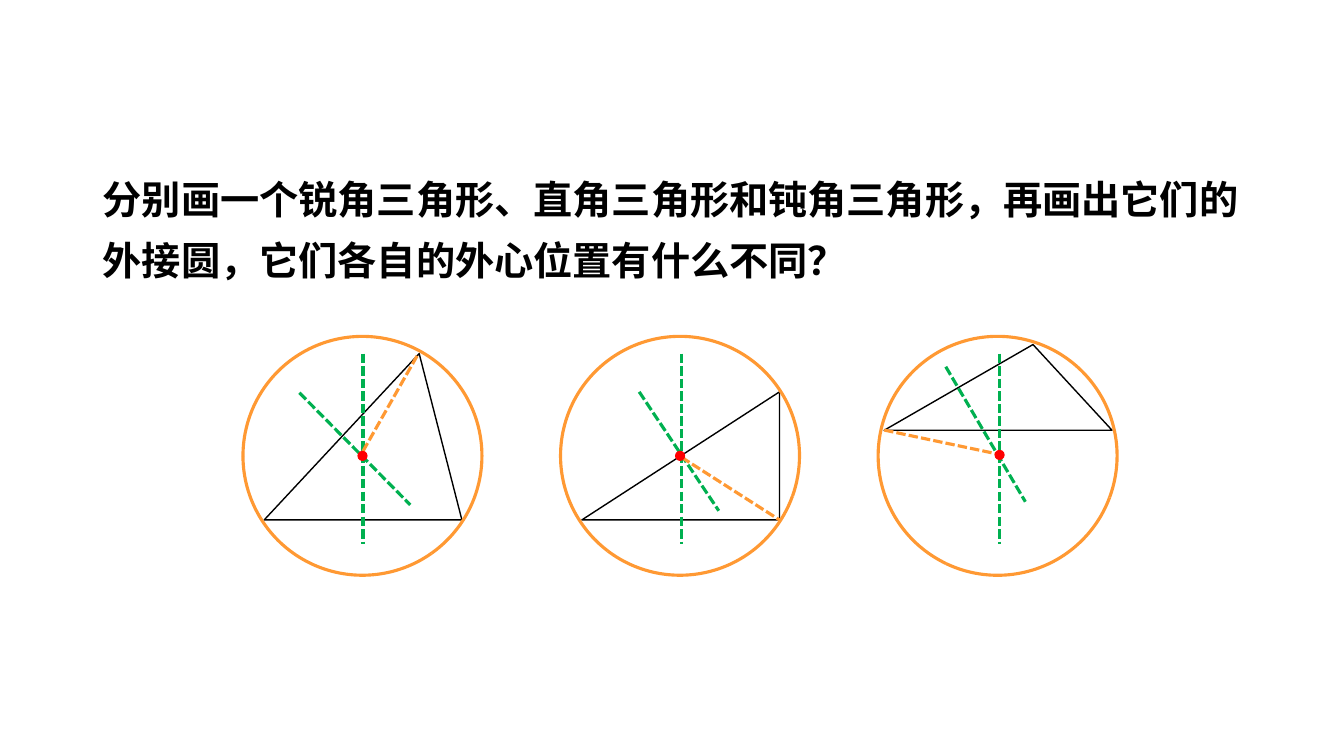
from lxml import etree
from pptx import Presentation
from pptx import util as u
from pptx.dml.color import RGBColor
from pptx.enum import dml, shapes, text
from pptx.oxml.ns import qn

COLORS = {"ink": "000000", "bisector": "00B050", "circle": "FF9933", "center": "FF0000"}
FONT = "Times New Roman"
QUESTION = ("分别画一个锐角三角形、直角三角形和钝角三角形，再画出它们的"
            "外接圆，它们各自的外心位置有什么不同？")
SLIDE_W, SLIDE_H = u.Inches(13.33), u.Inches(7.5)
DOT = 3.8
BISECTOR_TOP, BISECTOR_BOTTOM = 7.2, 86.9

# Percent of the circle's diameter, from its top left corner; angles in degrees.
TRIANGLES = [
    dict(triangle=(8.9, 7.2, 82.7, 69.6), apex=0.784, upright=50.2,
         slant=(23.6, 23.6, 70, 70.5), radius=(50.2, 48.1, 73.4, 7.2),
         center=(50, 50), split=(179.5, 54.7)),
    dict(triangle=(8.9, 23.2, 82.7, 53.6), apex=1, upright=50.6,
         slant=(32.9, 23.2, 66.2, 73), radius=(50.6, 50.6, 91.6, 76.8),
         center=(50, 50), split=(127.2, 19.7)),
    dict(triangle=(2.5, 3.4, 95.4, 35.9), apex=0.653, upright=50.6,
         slant=(28.3, 12.7, 61.6, 69.2), radius=(2.5, 39.2, 52.7, 49.8),
         center=(50.8, 49.6), split=(115.5, 20.4)),
]


def rgb(name):
    return RGBColor.from_string(COLORS[name])


def add_text(slide, content, box, size=28, color="ink", bold=True, spacing=1.3):
    frame = slide.shapes.add_textbox(*box).text_frame
    frame.word_wrap = True
    frame.auto_size = text.MSO_AUTO_SIZE.SHAPE_TO_FIT_TEXT
    frame.margin_left = frame.margin_right = u.Inches(0.13)
    frame.margin_top = frame.margin_bottom = u.Inches(0.07)
    paragraph = frame.paragraphs[0]
    paragraph.line_spacing = spacing
    run = paragraph.add_run()
    run.text = content
    run.font.name, run.font.size, run.font.bold = FONT, u.Pt(size), bold
    run.font.color.rgb = rgb(color)


def add_outline(slide, kind, box, color, width, fill=None, adjust=()):
    shape = slide.shapes.add_shape(kind, *box)
    shape.shadow.inherit = False
    for i, value in enumerate(adjust):
        shape.adjustments[i] = value
    if fill:
        shape.fill.solid()
        shape.fill.fore_color.rgb = rgb(fill)
    else:
        shape.fill.background()
    shape.line.color.rgb = rgb(color)
    shape.line.width = u.Pt(width)


def add_dashes(slide, ends, color):
    line = slide.shapes.add_connector(shapes.MSO_CONNECTOR.STRAIGHT, *ends)
    line.line.color.rgb = rgb(color)
    line.line.width = u.Pt(2.25)
    line.line.dash_style = dml.MSO_LINE.SQUARE_DOT
    etree.SubElement(line._element.spPr, qn("a:effectLst"))


def add_circumcircle(slide, left, top, diameter, figure):
    """Draw a triangle, two bisectors, a radius and its circumcircle."""
    def place(x, y):
        return round(left + diameter * x / 100), round(top + diameter * y / 100)

    def box(x, y, w, h):
        return *place(x, y), round(diameter * w / 100), round(diameter * h / 100)

    def ends(x1, y1, x2, y2):
        return *place(x1, y1), *place(x2, y2)

    kinds = shapes.MSO_SHAPE
    add_outline(slide, kinds.ISOSCELES_TRIANGLE, box(*figure["triangle"]), "ink", 1,
                adjust=[figure["apex"]])
    upright = figure["upright"]
    add_dashes(slide, ends(upright, BISECTOR_TOP, upright, BISECTOR_BOTTOM), "bisector")
    add_dashes(slide, ends(*figure["slant"]), "bisector")
    add_dashes(slide, ends(*figure["radius"]), "circle")
    start, end = figure["split"]
    for angles in ((start, end), (end, start)):
        # Arc angles are stored in 1/60000 degree, adjustments in 1/100000.
        add_outline(slide, kinds.ARC, box(0, 0, 100, 100), "circle", 2.25,
                    adjust=[angle * 0.6 for angle in angles])
    x, y = figure["center"]
    add_outline(slide, kinds.OVAL, box(x - DOT / 2, y - DOT / 2, DOT, DOT),
                "center", 0.75, fill="center")


def main():
    deck = Presentation()
    deck.slide_width, deck.slide_height = SLIDE_W, SLIDE_H
    slide = deck.slides.add_slide(deck.slide_layouts[6])
    add_text(slide, QUESTION, (round(SLIDE_W * 0.0668), round(SLIDE_H * 0.204),
                               round(SLIDE_W * 0.8665), round(SLIDE_H * 0.172)))
    first, pitch, diameter = SLIDE_W * 0.1808, SLIDE_W * 0.2363, SLIDE_W * 0.1778
    for column, figure in enumerate(TRIANGLES):
        add_circumcircle(slide, first + column * pitch, SLIDE_H * 0.445, diameter, figure)
    deck.save("out.pptx")


if __name__ == "__main__":
    main()
